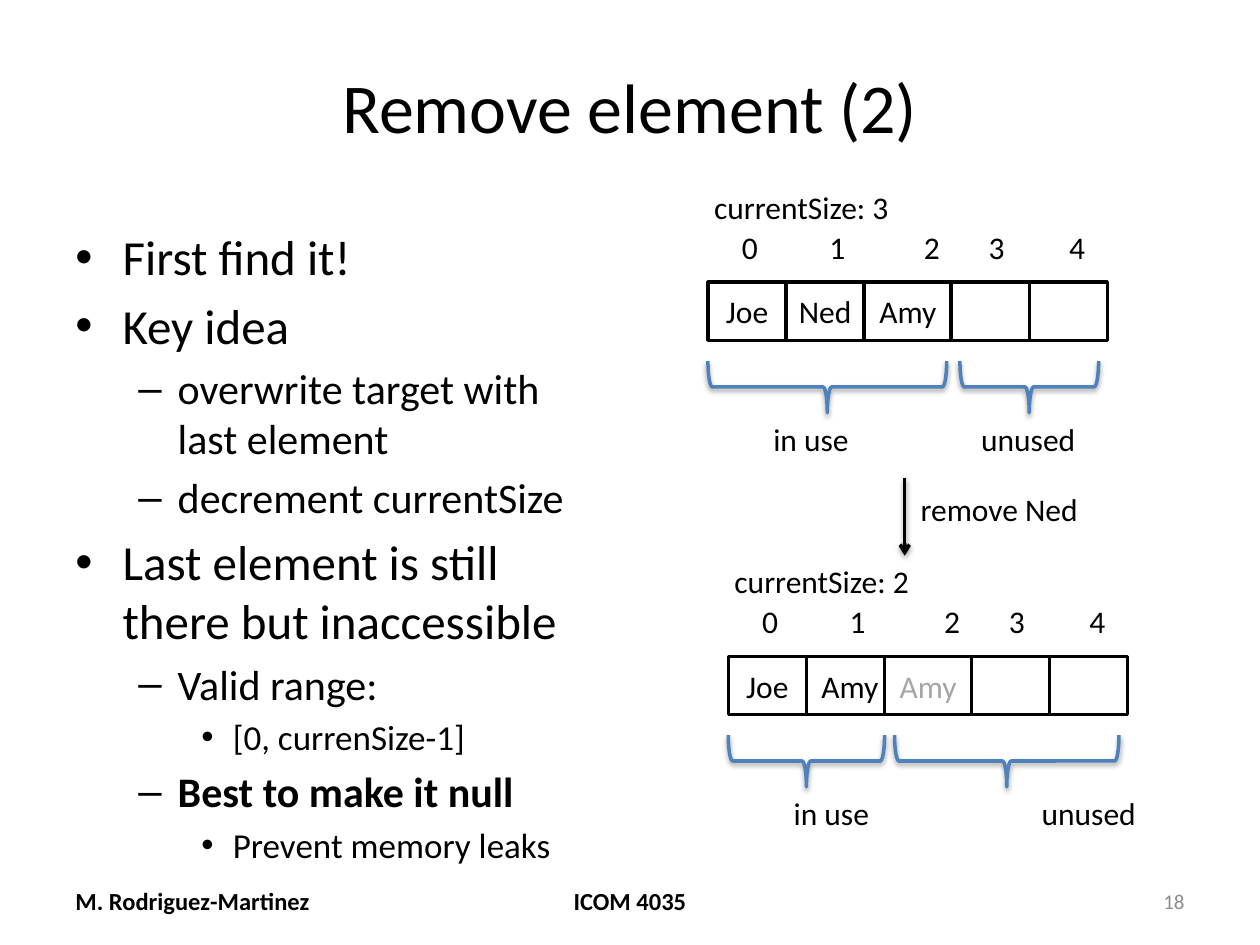
from lxml import etree
from pptx import Presentation
from pptx.dml.color import RGBColor
from pptx.enum.shapes import MSO_CONNECTOR, MSO_SHAPE
from pptx.enum.text import MSO_ANCHOR, MSO_AUTO_SIZE, PP_ALIGN
from pptx.oxml import parse_xml
from pptx.oxml.ns import nsdecls, qn
from pptx.util import Pt

BLACK = RGBColor(0x00, 0x00, 0x00)
WHITE = RGBColor(0xFF, 0xFF, 0xFF)
BLUE = RGBColor(0x4F, 0x81, 0xBD)
FADED = RGBColor(0xA6, 0xA6, 0xA6)
NUMBER_GRAY = RGBColor(0x8C, 0x8C, 0x8C)
LEFT, CENTER, RIGHT = PP_ALIGN.LEFT, PP_ALIGN.CENTER, PP_ALIGN.RIGHT
TOP, MIDDLE = MSO_ANCHOR.TOP, MSO_ANCHOR.MIDDLE
FIT_SHAPE, FIXED = MSO_AUTO_SIZE.SHAPE_TO_FIT_TEXT, MSO_AUTO_SIZE.NONE
RECTANGLE, BRACE = MSO_SHAPE.RECTANGLE, MSO_SHAPE.LEFT_BRACE
STRAIGHT = MSO_CONNECTOR.STRAIGHT

LABEL = {"word_wrap": False, "auto_size": FIT_SHAPE, "vertical_anchor": TOP}
BLOCK = {"word_wrap": True, "auto_size": FIXED, "vertical_anchor": TOP}
CENTERED = {"word_wrap": True, "auto_size": FIXED, "vertical_anchor": MIDDLE}
CELL = {"word_wrap": False, "auto_size": FIXED, "vertical_anchor": MIDDLE}


def write(shape, text, layout=LABEL, size=18, color=BLACK, align=LEFT, bold=False):
    frame = shape.text_frame
    for name, value in layout.items():
        setattr(frame, name, value)
    paragraph = frame.paragraphs[0]
    paragraph.text = text
    paragraph.alignment = align
    for name, value in {"name": "Calibri", "size": Pt(size), "bold": bold}.items():
        setattr(paragraph.font, name, value)
    paragraph.font.color.rgb = color
    return paragraph


def cast_shadow(shape):
    properties = shape._element.spPr
    for old in properties.findall(qn("a:effectLst")):
        properties.remove(old)
    properties.append(parse_xml(
        f'<a:effectLst {nsdecls("a")}>'
        '<a:outerShdw blurRad="40000" dist="20000" dir="5400000" rotWithShape="0">'
        '<a:srgbClr val="000000"><a:alpha val="38000"/></a:srgbClr>'
        '</a:outerShdw></a:effectLst>'))


presentation = Presentation()
presentation.slide_width, presentation.slide_height = Pt(720), Pt(540)
slide = presentation.slides.add_slide(presentation.slide_layouts[6])
shapes = slide.shapes

title = shapes.add_textbox(Pt(36), Pt(21.6), Pt(648), Pt(77))
write(title, "Remove element (2)", CENTERED, 40, align=CENTER)

footers = [
    (36, 168, "M. Rodriguez-Martinez", 14, BLACK, LEFT, True),
    (246, 228, "ICOM 4035", 14, BLACK, CENTER, True),
    (516, 168, "18", 12, NUMBER_GRAY, RIGHT, False),
]
for x, width, text, size, color, align, bold in footers:
    footer = shapes.add_textbox(Pt(x), Pt(500.5), Pt(width), Pt(28.75))
    write(footer, text, CENTERED, size, color, align, bold)

outline = [
    (0, "First find it!", False),
    (0, "Key idea", False),
    (1, "overwrite target with last element", False),
    (1, "decrement currentSize", False),
    (0, "Last element is still there but inaccessible", False),
    (1, "Valid range:", False),
    (2, "[0, currenSize-1]", False),
    (1, "Best to make it null", True),
    (2, "Prevent memory leaks", False),
]
level_styles = [(28, 27, 27, "•"), (24, 58.5, 22.5, "–"), (20, 90, 18, "•")]
body = shapes.add_textbox(Pt(36), Pt(126), Pt(318), Pt(356.4)).text_frame
for name, value in BLOCK.items():
    setattr(body, name, value)
for index, (level, text, bold) in enumerate(outline):
    size, margin, hanging, bullet = level_styles[level]
    point = body.add_paragraph() if index else body.paragraphs[0]
    for name, value in {"text": text, "level": level, "space_before": Pt(size * 0.2)}.items():
        setattr(point, name, value)
    for name, value in {"name": "Calibri", "size": Pt(size), "bold": bold}.items():
        setattr(point.font, name, value)
    point.font.color.rgb = BLACK
    properties = point._p.get_or_add_pPr()
    properties.set("marL", str(Pt(margin)))
    properties.set("indent", str(-Pt(hanging)))
    etree.SubElement(properties, qn("a:buFont")).set("typeface", "Arial")
    etree.SubElement(properties, qn("a:buChar")).set("char", bullet)

cell_offsets = [0, 44.6, 89.3, 139, 183.6]
index_tabs = [50, 104, 141, 187]
arrays = [
    {
        "x": 404.6, "y": 103.7, "size": 3,
        "cells": [("Joe", 44.6, BLACK), ("Ned", 44.6, BLACK), ("Amy", 49.7, BLACK),
                  ("", 44.6, BLACK), ("", 44.6, BLACK)],
        "braces": [(0, 136.4, "in use", 30.2, 58.3), (144, 79.2, "unused", 149, 69.1)],
    },
    {
        "x": 416.2, "y": 317.5, "size": 2,
        "cells": [("Joe", 44.6, BLACK), ("Amy", 49.7, BLACK), ("Amy", 49.7, FADED),
                  ("", 50, BLACK), ("", 44.6, BLACK)],
        "braces": [(0, 89.3, "in use", 30.2, 58.3), (95, 128.2, "unused", 172, 69.1)],
    },
]
brace_depth = 29.5
for array in arrays:
    x, y = array["x"], array["y"]
    size_label = shapes.add_textbox(Pt(x - 3.6), Pt(y), Pt(116), Pt(29))
    write(size_label, f"currentSize: {array['size']}")

    for offset, (text, width, color) in zip(cell_offsets, array["cells"]):
        cell = shapes.add_shape(RECTANGLE, Pt(x + offset), Pt(y + 57.6), Pt(width), Pt(33.2))
        cell.shadow.inherit = False
        cell.fill.solid()
        cell.fill.fore_color.rgb = WHITE
        cell.line.color.rgb = BLACK
        cell.line.width = Pt(2)
        write(cell, text, CELL, color=color, align=CENTER)

    indices = shapes.add_textbox(Pt(x + 12.2), Pt(y + 23.2), Pt(212.4), Pt(29))
    index_line = write(indices, "0\t1\t2\t3\t4", BLOCK)
    tabs = etree.SubElement(index_line._p.get_or_add_pPr(), qn("a:tabLst"))
    index_line._p.pPr.insert(0, tabs)
    for position in index_tabs:
        tab = etree.SubElement(tabs, qn("a:tab"))
        tab.set("pos", str(Pt(position)))
        tab.set("algn", "l")

    for offset, span, text, label_offset, label_width in array["braces"]:
        brace = shapes.add_shape(
            BRACE, Pt(x + offset + (span - brace_depth) / 2),
            Pt(y + 102.6 + (brace_depth - span) / 2), Pt(brace_depth), Pt(span))
        brace.rotation = 270
        brace.fill.background()
        brace.line.color.rgb = BLUE
        brace.line.width = Pt(2)
        cast_shadow(brace)
        usage = shapes.add_textbox(Pt(x + label_offset), Pt(y + 132.5), Pt(label_width), Pt(29))
        write(usage, text)

removal = shapes.add_connector(STRAIGHT, Pt(517), Pt(273), Pt(517), Pt(317.5))
removal.line.color.rgb = BLACK
removal.line.width = Pt(2)
etree.SubElement(removal.line._get_or_add_ln(), qn("a:tailEnd")).set("type", "arrow")
cast_shadow(removal)
removal_label = shapes.add_textbox(Pt(519), Pt(276.5), Pt(106), Pt(29))
write(removal_label, "remove Ned")

presentation.save("out.pptx")
